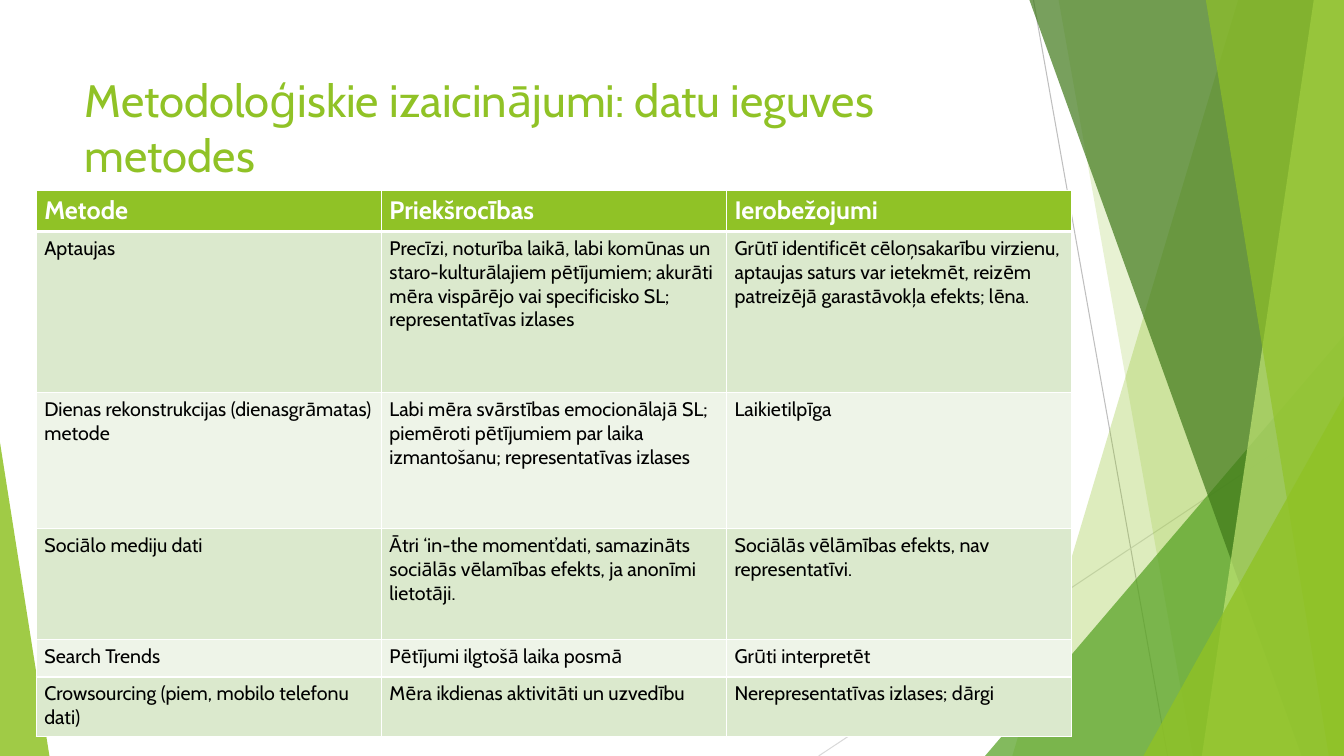
from lxml.etree import SubElement
from pptx import Presentation
from pptx.dml.color import RGBColor
from pptx.enum.shapes import MSO_CONNECTOR, MSO_SHAPE
from pptx.enum.text import MSO_ANCHOR, MSO_AUTO_SIZE, PP_ALIGN
from pptx.oxml.ns import qn
from pptx.util import Inches, Pt

W, H = 13.33, 7.5
FONT = "Cabin"
GREEN, WHITE, BLACK = "90C226", "FFFFFF", "000000"
BANDS = ("DBE9CD", "EEF4E8")

HEADERS = ("Metode", "Priekšrocības", "Ierobežojumi")
METHODS = (
    (1.6, "Aptaujas",
     "Precīzi, noturība laikā, labi komūnas un staro-kulturālajiem pētījumiem; "
     "akurāti mēra vispārējo vai specificisko SL; representatīvas izlases",
     "Grūtī identificēt cēloņsakarību virzienu, aptaujas saturs var ietekmēt, "
     "reizēm patreizējā garastāvokļa efekts; lēna."),
    (1.35, "Dienas rekonstrukcijas (dienasgrāmatas) metode",
     "Labi mēra svārstības emocionālajā SL; piemēroti pētījumiem par laika "
     "izmantošanu; representatīvas izlases",
     "Laikietilpīga"),
    (1.1, "Sociālo mediju dati",
     "Ātri ‘in-the moment’dati, samazināts sociālās vēlamības efekts, ja anonīmi lietotāji.",
     "Sociālās vēlāmības efekts, nav representatīvi."),
    (0.37, "Search Trends", "Pētījumi ilgtošā laika posmā", "Grūti interpretēt"),
    (0.59, "Crowsourcing (piem, mobilo telefonu dati)",
     "Mēra ikdienas aktivitāti un uzvedību", "Nerepresentatīvas izlases; dārgi"),
)


def rgb(color):
    return RGBColor.from_string(color)


def paint(sp, color, opacity):
    sp.shadow.inherit = False
    sp.fill.solid()
    sp.fill.fore_color.rgb = rgb(color)
    sp.line.fill.background()
    clr = sp._element.spPr.find(qn("a:solidFill"))[0]
    SubElement(clr, qn("a:alpha"), val=str(opacity * 1000))


def add_line(s, x1, y1, x2, y2, color):
    ln = s.shapes.add_connector(MSO_CONNECTOR.STRAIGHT, Inches(x1), Inches(y1),
                                Inches(x2), Inches(y2))
    ln.line.color.rgb = rgb(color)
    ln.line.width = Pt(0.75)
    SubElement(ln._element.spPr, qn("a:effectLst"))


def add_blade(s, x, y, w, h, top, bottom, color, opacity):
    fb = s.shapes.build_freeform(Inches(top), Inches(y))
    fb.add_line_segments([(Inches(px), Inches(py)) for px, py in
                          ((x + w, y), (x + w, y + h), (bottom, y + h))])
    paint(fb.convert_to_shape(), color, opacity)


def add_wedge(s, x, y, w, h, apex, color, opacity):
    sp = s.shapes.add_shape(MSO_SHAPE.ISOSCELES_TRIANGLE, Inches(x), Inches(y),
                            Inches(w), Inches(h))
    sp.adjustments[0] = apex
    paint(sp, color, opacity)


def add_right_wedge(s, x, y, w, h, width, height, color, opacity):
    add_wedge(s, x + w - width, y + h - height, width, height, 1, color, opacity)


def add_facets(s, x, y, w, h):
    box = (x, y, w, h)
    add_line(s, 10.25, y, 11.58, y + h, "BFBFBF")
    add_line(s, x + w, 4.03, 8.12, y + h, "D9D9D9")
    add_blade(s, *box, 12.28, 10.04, GREEN, 30)
    add_blade(s, *box, 10.5, 11.83, GREEN, 20)
    add_right_wedge(s, *box, 3.56, 4.17, "54A021", 72)
    add_blade(s, *box, 10.21, 12.91, "3F7819", 70)
    add_blade(s, *box, 13.03, 11.92, "C0E474", 70)
    add_blade(s, *box, 11.96, 13.18, GREEN, 65)
    add_right_wedge(s, *box, 1.99, 3.57, GREEN, 80)
    add_wedge(s, x, y + h - 3.11, 0.49, 3.11, 0, GREEN, 85)


def add_title(s, x, y, w, h, text):
    title = s.shapes.title
    title.left, title.top, title.width, title.height = map(Inches, (x, y, w, h))
    s.shapes._spTree.append(title._element)
    tf = title.text_frame
    tf.text = text
    tf.word_wrap = True
    tf.auto_size = MSO_AUTO_SIZE.NONE
    tf.vertical_anchor = MSO_ANCHOR.TOP
    p = tf.paragraphs[0]
    p.alignment = PP_ALIGN.LEFT
    p.line_spacing = 1.0
    p.font.name = FONT
    p.font.size = Pt(32.4)
    p.font.color.rgb = rgb(GREEN)


def set_borders(cell, top, bottom):
    tcPr = cell._tc.get_or_add_tcPr()
    for tag, width in (("lnL", 1), ("lnR", 1), ("lnT", top), ("lnB", bottom)):
        ln = SubElement(tcPr, qn("a:" + tag), w=str(Pt(width)))
        fill = SubElement(ln, qn("a:solidFill"))
        SubElement(fill, qn("a:srgbClr"), val=WHITE)


def fill_cell(cell, text, fill, color, size, bold, top, bottom):
    set_borders(cell, top, bottom)
    cell.fill.solid()
    cell.fill.fore_color.rgb = rgb(fill)
    cell.margin_left = cell.margin_right = Inches(0.08)
    cell.margin_top = cell.margin_bottom = Inches(0.05)
    cell.text = text
    font = cell.text_frame.paragraphs[0].font
    font.name = FONT
    font.size = Pt(size)
    font.bold = bold
    font.color.rgb = rgb(color)


def add_methods_table(s, x, y, w, h):
    table = s.shapes.add_table(len(METHODS) + 1, len(HEADERS), Inches(x), Inches(y),
                               Inches(w), Inches(h)).table
    for col, header in enumerate(HEADERS):
        table.columns[col].width = Inches(w / len(HEADERS))
        fill_cell(table.cell(0, col), header, GREEN, WHITE, 18, True, 1, 3)
    table.rows[0].height = Inches(0.34)
    for row, (height, *texts) in enumerate(METHODS, 1):
        table.rows[row].height = Inches(height)
        for col, text in enumerate(texts):
            fill_cell(table.cell(row, col), text, BANDS[(row - 1) % 2], BLACK,
                      14, False, 3 if row == 1 else 1, 1)


def main():
    prs = Presentation()
    prs.slide_width, prs.slide_height = Inches(W), Inches(H)
    s = prs.slides.add_slide(prs.slide_layouts[5])
    add_facets(s, 0, 0, W, H)
    add_title(s, 0.74, 0.67, 9.4, 0.8, "Metodoloģiskie izaicinājumi: datu ieguves metodes")
    add_methods_table(s, 0.36, 1.89, 10.27, 5.4)
    prs.save("out.pptx")


if __name__ == "__main__":
    main()
